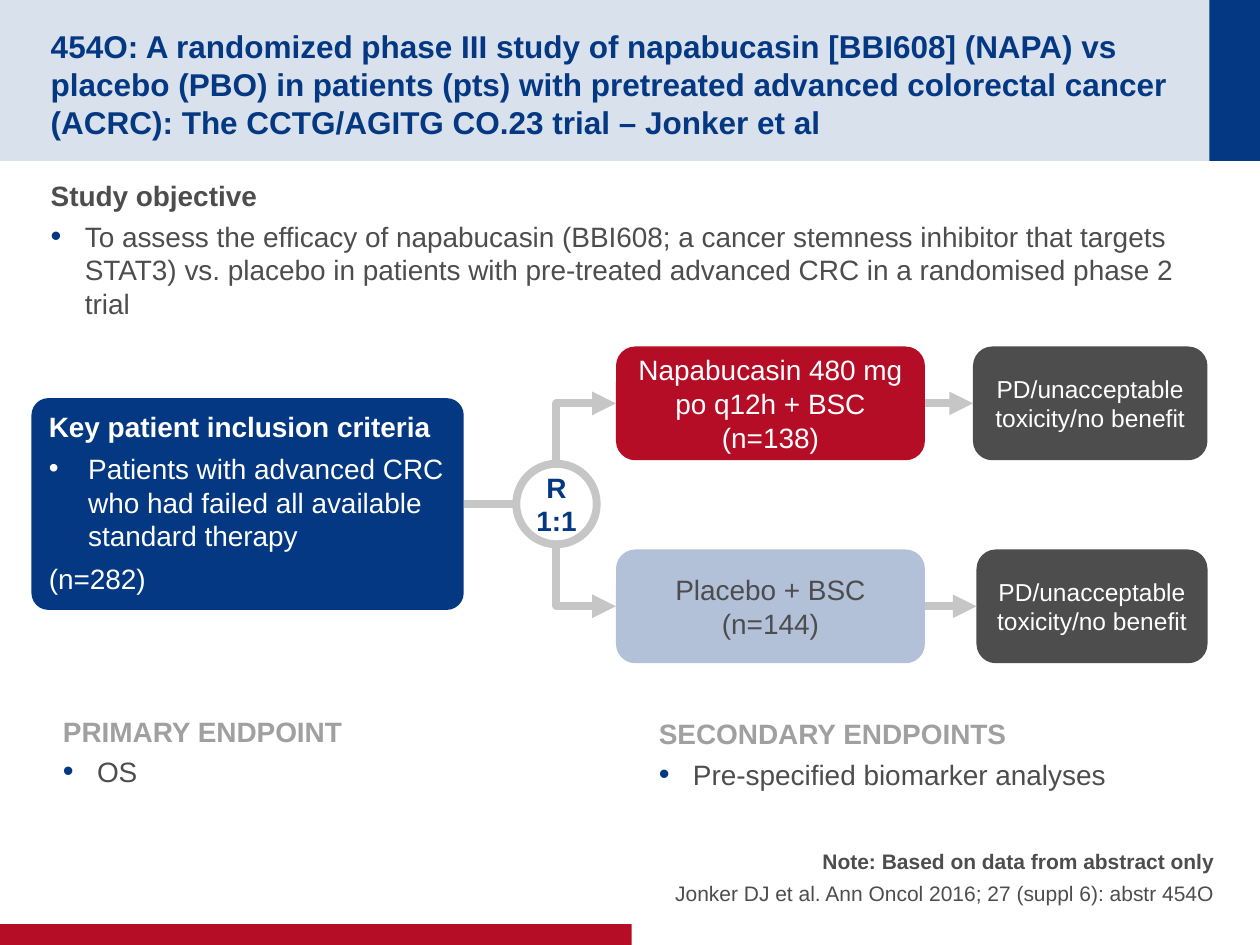
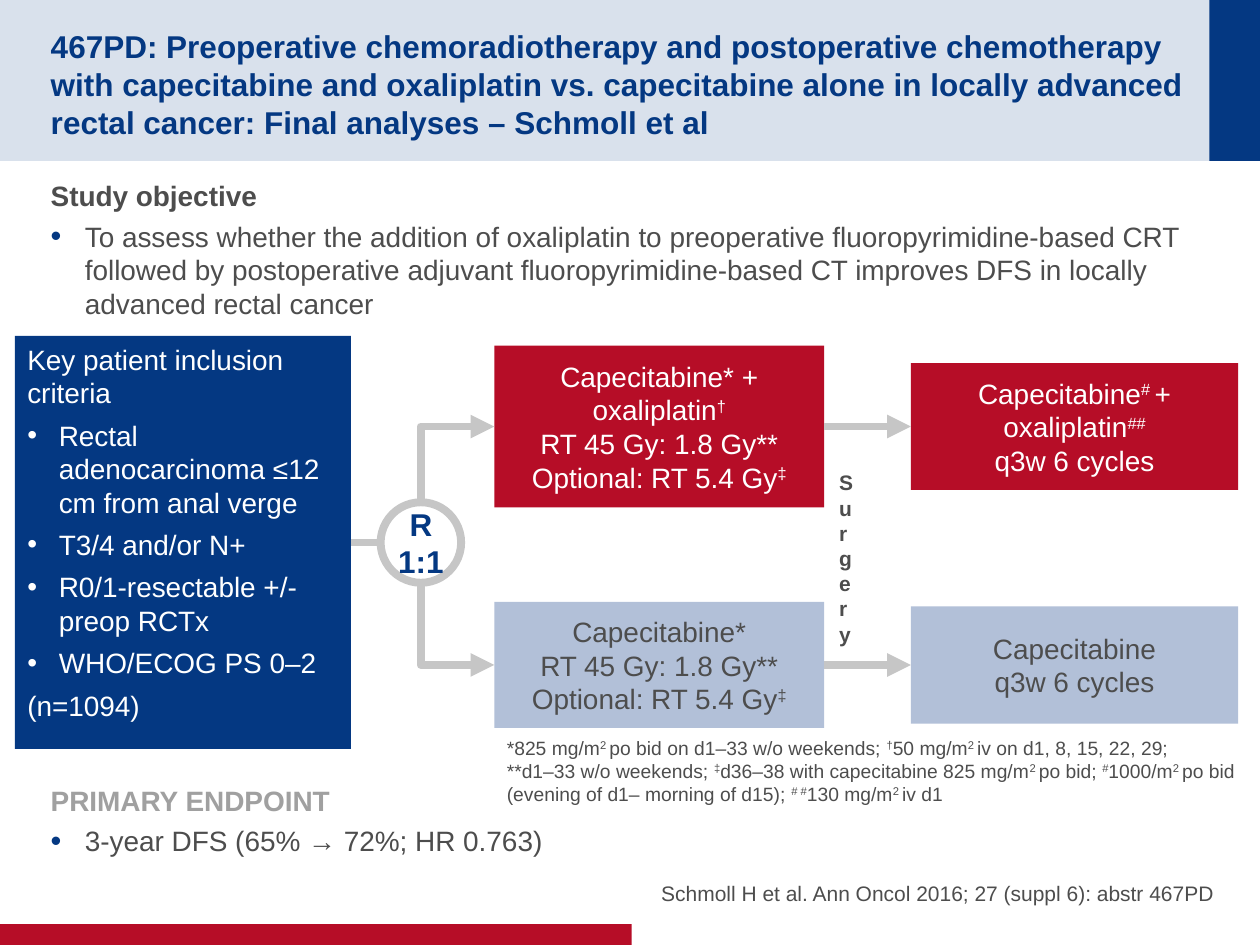
from dataclasses import dataclass
from typing import NamedTuple, Optional

from lxml.etree import SubElement
from pptx import Presentation
from pptx.dml.color import RGBColor
from pptx.enum.shapes import MSO_CONNECTOR as Route, MSO_SHAPE as Form
from pptx.enum.text import MSO_ANCHOR as Anchor, PP_ALIGN as Align
from pptx.oxml.ns import qn
from pptx.shapes.autoshape import Shape
from pptx.shapes.connector import Connector
from pptx.slide import Slide
from pptx.util import Pt

NAVY, RED, PALE, BAND = "043882", "B60D27", "B2C0D8", "D9E1EC"
INK, GREY, LINE, WHITE = "4D4D4D", "A0A0A0", "C6C6C6", "FFFFFF"
FONT = "Arial"
TOP, LEFT, BOTTOM, RIGHT = range(4)


class Area(NamedTuple):
    x: float
    y: float
    w: float
    h: float


class Pads(NamedTuple):
    left: float = 7.2
    top: float = 3.6
    right: float = 7.2
    bottom: float = 3.6


@dataclass(frozen=True)
class Style:
    size: float
    ink: str = INK
    align: Align = Align.LEFT
    anchor: Anchor = Anchor.TOP
    pads: Pads = Pads()
    after: float = 0
    hang: float = 19.5
    dot: str = NAVY
    scale: int = 110
    wrap: bool = True


@dataclass(frozen=True)
class Para:
    text: str
    bold: bool = False
    dot: bool = False
    ink: Optional[str] = None


@dataclass(frozen=True)
class Box:
    area: Area
    fill: str
    style: Style
    paras: list[Para]
    curve: float = 0


def head_style(size: float, ink: str) -> Style:
    return Style(size, ink, Align.CENTER, Anchor.MIDDLE, Pads(7.2, 0, 7.2, 0))


def key_style(hang: float) -> Style:
    return Style(16, WHITE, after=5, hang=hang, dot=WHITE, scale=100)


def node_style(size: float) -> Style:
    return Style(size, NAVY, Align.CENTER, Anchor.MIDDLE, wrap=False)


TITLE = Style(18, NAVY, anchor=Anchor.MIDDLE, pads=Pads(0, 3.6, 0, 0))
BODY = Style(16, pads=Pads(0, 3.6, 0, 3.6), after=4)
CITE = Style(12, align=Align.RIGHT, anchor=Anchor.BOTTOM,
             pads=Pads(0, 0, 0, 0), after=4)
LIGHT, DARK, SMALL = (head_style(16, WHITE), head_style(16, INK),
                      head_style(14, WHITE))


def color(code: str) -> RGBColor:
    return RGBColor.from_string(code)


def place(area: Area) -> list[Pt]:
    return [Pt(side) for side in area]


def add_dot(props, style: Style) -> None:
    props.set("marL", str(Pt(style.hang)))
    props.set("indent", str(-Pt(style.hang)))
    tint = SubElement(props, qn("a:buClr"))
    SubElement(tint, qn("a:srgbClr"), val=style.dot)
    SubElement(props, qn("a:buSzPct"), val=str(style.scale * 1000))
    SubElement(props, qn("a:buFont"), typeface=FONT)
    SubElement(props, qn("a:buChar"), char="•")


def write(shape: Shape, style: Style, paras: list[Para]) -> None:
    """Fill a shape with text; parts between carets are raised."""
    frame = shape.text_frame
    frame.word_wrap = style.wrap
    frame.vertical_anchor = style.anchor
    frame.margin_left, frame.margin_top, frame.margin_right, \
        frame.margin_bottom = (Pt(pad) for pad in style.pads)
    for i, para in enumerate(paras):
        item = frame.add_paragraph() if i else frame.paragraphs[0]
        item.alignment = style.align
        item.space_after = Pt(style.after)
        if para.dot:
            add_dot(item._p.get_or_add_pPr(), style)
        for j, part in enumerate(para.text.split("^")):
            for k, piece in enumerate(part.split("\n")):
                if k:
                    item.add_line_break()
                if not piece:
                    continue
                run = item.add_run()
                run.text = piece
                font = run.font
                font.name, font.size, font.bold = FONT, Pt(style.size), para.bold
                font.color.rgb = color(para.ink or style.ink)
                if j % 2:
                    run._r.get_or_add_rPr().set("baseline", "30000")


def add_text(page: Slide, area: Area, style: Style,
             paras: list[Para]) -> Shape:
    text = page.shapes.add_textbox(*place(area))
    write(text, style, paras)
    return text


def add_form(page: Slide, form: Form, area: Area, fill: str) -> Shape:
    shape = page.shapes.add_shape(form, *place(area))
    shape.shadow.inherit = False
    shape.fill.solid()
    shape.fill.fore_color.rgb = color(fill)
    shape.line.fill.background()
    return shape


def add_box(page: Slide, box: Box) -> Shape:
    form = Form.ROUNDED_RECTANGLE if box.curve else Form.RECTANGLE
    shape = add_form(page, form, box.area, box.fill)
    if box.curve:
        shape.adjustments[0] = box.curve
    write(shape, box.style, box.paras)
    return shape


def add_node(page: Slide, x: float, y: float, size: float) -> Shape:
    node = add_form(page, Form.OVAL, Area(x, y, 46, 46), WHITE)
    node.line.color.rgb = color(LINE)
    node.line.width = Pt(4.5)
    write(node, node_style(size), [Para("R", True), Para("1:1", True)])
    return node


def fix_site(line: Connector, tag: str, shape: Shape) -> None:
    """An oval has eight joints, so its side numbers are doubled."""
    if shape.auto_shape_type == Form.OVAL:
        joint = line._element.find(".//" + qn(tag))
        joint.set("id", str(shape.shape_id))
        joint.set("idx", str(int(joint.get("idx")) * 2))


def link(page: Slide, goal: Shape, start: Shape, side: int = RIGHT,
         arrow: bool = True) -> None:
    """Join the left of goal to a side of start, with the head at goal."""
    bent = side != RIGHT
    route = Route.ELBOW if bent else Route.STRAIGHT
    line = page.shapes.add_connector(route, 0, 0, 0, 0)
    line.begin_connect(goal, LEFT)
    line.end_connect(start, side)
    fix_site(line, "a:stCxn", goal)
    fix_site(line, "a:endCxn", start)
    line.line.color.rgb = color(LINE)
    line.line.width = Pt(4.5)
    props = line._element.spPr
    if bent:
        props.find(qn("a:prstGeom")).set("prst", "bentConnector2")
    if arrow:
        SubElement(props.find(qn("a:ln")), qn("a:headEnd"), type="triangle")
    SubElement(props, qn("a:effectLst"))


def add_arms(page: Slide, key: Box, node: Shape,
             arms: list[tuple[Box, Box]]) -> None:
    """Draw the patient box, the upper and lower arms and their arrows."""
    link(page, node, add_box(page, key), arrow=False)
    for side, (drug, after) in zip((TOP, BOTTOM), arms):
        first, last = add_box(page, drug), add_box(page, after)
        link(page, first, node, side)
        link(page, last, first)


def add_page(deck: Presentation, title: str, aim: str,
             cites: list[Para]) -> Slide:
    page = deck.slides.add_slide(deck.slide_layouts[6])
    for area, fill in ((Area(0, 0, 720, 92), BAND),
                       (Area(691, 0, 29, 92), NAVY),
                       (Area(0, 528, 361, 12), RED)):
        add_form(page, Form.RECTANGLE, area, fill)
    add_text(page, Area(29, 14.5, 649, 63), TITLE, [Para(title, True)])
    add_text(page, Area(29, 98.5, 662, 374), BODY,
             [Para("Study objective", True), Para(aim, dot=True)])
    add_text(page, Area(345, 479.5, 349, 38), CITE, cites)
    return page


def add_goal(page: Slide, area: Area, head: str, text: str) -> None:
    add_text(page, area, BODY,
             [Para(head, True, ink=GREY), Para(text, dot=True)])


def draw_napa(deck: Presentation) -> None:
    page = add_page(
        deck,
        "454O: A randomized phase III study of napabucasin [BBI608] (NAPA) vs "
        "placebo (PBO) in patients (pts) with pretreated advanced colorectal "
        "cancer (ACRC): The CCTG/AGITG CO.23 trial – Jonker et al",
        "To assess the efficacy of napabucasin (BBI608; a cancer stemness "
        "inhibitor that targets STAT3) vs. placebo in patients with "
        "pre-treated advanced CRC in a randomised phase 2 trial",
        [Para("Note: Based on data from abstract only", True),
         Para("Jonker DJ et al. Ann Oncol 2016; 27 (suppl 6): abstr 454O")])
    key = Box(Area(18, 227.5, 247, 121), NAVY, key_style(22.5), [
        Para("Key patient inclusion criteria", True),
        Para("Patients with advanced CRC who had failed all available "
             "standard therapy", dot=True),
        Para("(n=282)")], 0.08)
    stop = [Para("PD/unacceptable toxicity/no benefit")]
    curve = 0.17
    arms = [
        (Box(Area(352, 198, 176.5, 65), RED, LIGHT,
             [Para("Napabucasin 480 mg po q12h + BSC"), Para("(n=138)")],
             curve),
         Box(Area(556, 198, 134, 65), INK, SMALL, stop, curve)),
        (Box(Area(352, 314, 176.5, 65), PALE, DARK,
             [Para("Placebo + BSC"), Para("(n=144)")], curve),
         Box(Area(558, 314, 132, 65), INK, SMALL, stop, curve))]
    add_arms(page, key, add_node(page, 295, 265, 16), arms)
    add_goal(page, Area(36, 404.5, 247, 80), "PRIMARY ENDPOINT", "OS")
    add_goal(page, Area(376.5, 406, 343.5, 80), "SECONDARY ENDPOINTS",
             "Pre-specified biomarker analyses")


def draw_cape(deck: Presentation) -> None:
    page = add_page(
        deck,
        "467PD: Preoperative chemoradiotherapy and postoperative chemotherapy "
        "with capecitabine and oxaliplatin vs. capecitabine alone in locally "
        "advanced rectal cancer: Final analyses – Schmoll et al",
        "To assess whether the addition of oxaliplatin to preoperative "
        "fluoropyrimidine-based CRT followed by postoperative adjuvant "
        "fluoropyrimidine-based CT improves DFS in locally advanced rectal "
        "cancer",
        [Para("Schmoll H et al. Ann Oncol 2016; 27 (suppl 6): abstr 467PD")])
    needs = ("Rectal adenocarcinoma ≤12 cm from anal verge", "T3/4 and/or N+",
             "R0/1-resectable +/- preop RCTx", "WHO/ECOG PS 0–2")
    key = Box(Area(8.5, 192, 192, 236), NAVY, key_style(18), [
        Para("Key patient inclusion criteria"),
        *(Para(need, dot=True) for need in needs),
        Para("(n=1094)")])
    beam = [Para("RT 45 Gy: 1.8 Gy**"), Para("Optional: RT 5.4 Gy^‡^")]
    course = Para("q3w 6 cycles")
    arms = [
        (Box(Area(282.5, 197.5, 188.5, 92.5), RED, LIGHT,
             [Para("Capecitabine* +"), Para("oxaliplatin^†^"), *beam]),
         Box(Area(520.5, 207.5, 187, 72.5), RED, LIGHT,
             [Para("Capecitabine^# ^+ oxaliplatin^##^"), course])),
        (Box(Area(282.5, 344, 188.5, 72), PALE, DARK,
             [Para("Capecitabine*"), *beam]),
         Box(Area(520.5, 346.5, 187, 67), PALE, DARK,
             [Para("Capecitabine"), course]))]
    add_arms(page, key, add_node(page, 217.5, 287, 18), arms)
    label = add_text(page, Area(472.5, 265, 30, 127.5), Style(12),
                     [Para("Surgery", True)])
    label.text_frame._txBody.bodyPr.set("vert", "wordArtVert")
    add_text(page, Area(282.5, 417, 431, 47.5), Style(11), [Para(
        "*825 mg/m^2 ^po bid on d1–33 w/o weekends; ^†^50 mg/m^2 ^iv on "
        "d1, 8, 15, 22, 29;\n**d1–33 w/o weekends; ^‡^d36–38 with "
        "capecitabine 825 mg/m^2 ^po bid; ^#^1000/m^2 ^po bid (evening of "
        "d1– morning of d15); ^# #^130 mg/m^2 ^iv d1")])
    add_goal(page, Area(29, 444, 364.5, 78.5), "PRIMARY ENDPOINT",
             "3-year DFS (65% → 72%; HR 0.763)")


def main() -> None:
    deck = Presentation()
    deck.slide_width, deck.slide_height = Pt(720), Pt(540)
    draw_napa(deck)
    draw_cape(deck)
    deck.save("out.pptx")


if __name__ == "__main__":
    main()
